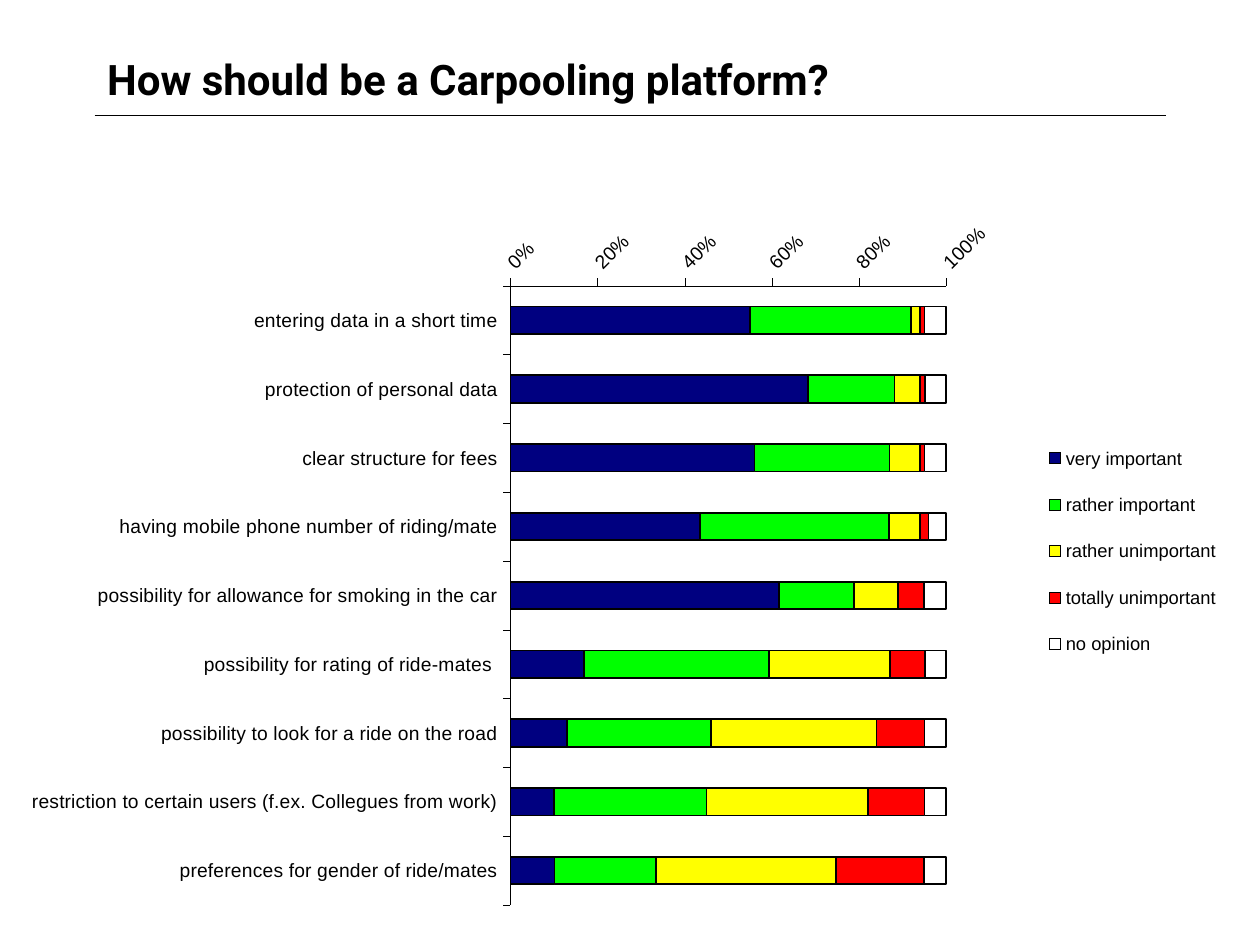
import lxml.etree
import pptx
import pptx.chart.data
import pptx.dml.color
import pptx.enum.chart
import pptx.enum.shapes
import pptx.enum.text
import pptx.oxml.ns
import pptx.util

Pt = pptx.util.Pt
RGBColor = pptx.dml.color.RGBColor
qn = pptx.oxml.ns.qn

BLACK = RGBColor(0, 0, 0)
NAVY = RGBColor(0, 0, 0x80)
GREEN = RGBColor(0, 0xFF, 0)
YELLOW = RGBColor(0xFF, 0xFF, 0)
RED = RGBColor(0xFF, 0, 0)
WHITE = RGBColor(0xFF, 0xFF, 0xFF)

FEATURES = [
    "entering data in a short time",
    "protection of personal data",
    "clear structure for fees",
    "having mobile phone number of riding/mate",
    "possibility for allowance for smoking in the car",
    "possibility for rating of ride-mates ",
    "possibility to look for a ride on the road",
    "restriction to certain users (f.ex. Collegues from work)",
    "preferences for gender of ride/mates",
]
RATINGS = [
    ("very important", NAVY, (55, 69, 56, 43, 61, 17, 13, 10, 10)),
    ("rather important", GREEN, (37, 20, 31, 43, 17, 43, 33, 35, 23)),
    ("rather unimportant", YELLOW, (2, 6, 7, 7, 10, 28, 38, 37, 41)),
    ("totally unimportant", RED, (1, 1, 1, 2, 6, 8, 11, 13, 20)),
    ("no opinion", WHITE, (5, 5, 5, 4, 5, 5, 5, 5, 5)),
]


def style_font(font, name, size):
    """Set a black font of the given name and size."""
    font.name = name
    font.size = Pt(size)
    font.color.rgb = BLACK


def style_line(line, width):
    """Draw a solid black line of the given width."""
    line.color.rgb = BLACK
    line.width = Pt(width)


def add_title(page, text):
    """Fill and place the title placeholder."""
    title = page.shapes.title
    title.left, title.top, title.width, title.height = Pt(54), Pt(24), Pt(612), Pt(42)
    frame = title.text_frame
    frame.text = text
    frame.vertical_anchor = pptx.enum.text.MSO_ANCHOR.MIDDLE
    para = frame.paragraphs[0]
    para.alignment = pptx.enum.text.PP_ALIGN.LEFT
    style_font(para.font, "Roboto", 24)
    para.font.bold = True


def add_rule(page, left, right, top):
    """Add a thin horizontal line without shadow."""
    straight = pptx.enum.shapes.MSO_CONNECTOR.STRAIGHT
    rule = page.shapes.add_connector(straight, Pt(left), Pt(top), Pt(right), Pt(top))
    style_line(rule.line, 0.75)
    lxml.etree.SubElement(rule._element.spPr, qn("a:effectLst"))


def set_layout(holder, index, left, top, width, height, inner=False):
    """Place a chart part by fractions of the chart area."""
    for old in holder.findall(qn("c:layout")):
        holder.remove(old)
    layout = holder.makeelement(qn("c:layout"), {})
    holder.insert(index, layout)
    manual = lxml.etree.SubElement(layout, qn("c:manualLayout"))
    settings = [("layoutTarget", "inner")] if inner else []
    settings += [("xMode", "edge"), ("yMode", "edge")]
    settings += [("x", left), ("y", top), ("w", width), ("h", height)]
    for tag, value in settings:
        lxml.etree.SubElement(manual, qn(f"c:{tag}"), val=str(value))


def style_axis(axis):
    """Give an axis its line, outer ticks and label font."""
    axis.has_major_gridlines = False
    axis.major_tick_mark = pptx.enum.chart.XL_TICK_MARK.OUTSIDE
    axis.minor_tick_mark = pptx.enum.chart.XL_TICK_MARK.NONE
    style_line(axis.format.line, 0.25)
    style_font(axis.tick_labels.font, "Arial", 11)


def style_legend(chart):
    """Show the legend to the right of the bars."""
    chart.has_legend = True
    legend = chart.legend
    legend.position = pptx.enum.chart.XL_LEGEND_POSITION.RIGHT
    legend.include_in_layout = False
    style_font(legend.font, "Arial", 10.5)
    set_layout(legend._element, 1, 0.83, 0.37, 0.16, 0.32)


def add_ratings_chart(page):
    """Add the bar chart that shows the share of each rating per feature."""
    ratings = pptx.chart.data.CategoryChartData(number_format="0")
    ratings.categories = FEATURES
    for name, _, values in RATINGS:
        ratings.add_series(name, values)
    kind = pptx.enum.chart.XL_CHART_TYPE.BAR_STACKED_100
    chart = page.shapes.add_chart(kind, Pt(0), Pt(71.5), Pt(711.5), Pt(459.5), ratings).chart
    chart.has_title = False
    style_font(chart.font, "Arial", 11)

    plot = chart.plots[0]
    plot.gap_width = 150
    plot.overlap = 100
    plot.vary_by_categories = False
    for series, (_, color, _) in zip(plot.series, RATINGS):
        series.format.fill.solid()
        series.format.fill.fore_color.rgb = color
        style_line(series.format.line, 1)

    style_axis(chart.category_axis)
    chart.category_axis.reverse_order = True
    style_axis(chart.value_axis)
    labels = chart.value_axis.tick_labels
    labels.number_format = "0%"
    labels.number_format_is_linked = False
    chart.value_axis._element.find(f".//{qn('a:bodyPr')}").set("rot", "-2700000")

    style_legend(chart)
    plot_area = chart._chartSpace.find(f".//{qn('c:plotArea')}")
    set_layout(plot_area, 0, 0.41, 0.2, 0.35, 0.77, inner=True)


def main():
    """Build and save the deck."""
    deck = pptx.Presentation()
    deck.slide_width, deck.slide_height = Pt(720), Pt(540)
    page = deck.slides.add_slide(deck.slide_layouts[5])
    add_rule(page, 54, 666, 66)
    add_title(page, "How should be a Carpooling platform?")
    add_ratings_chart(page)
    deck.save("out.pptx")


if __name__ == "__main__":
    main()
